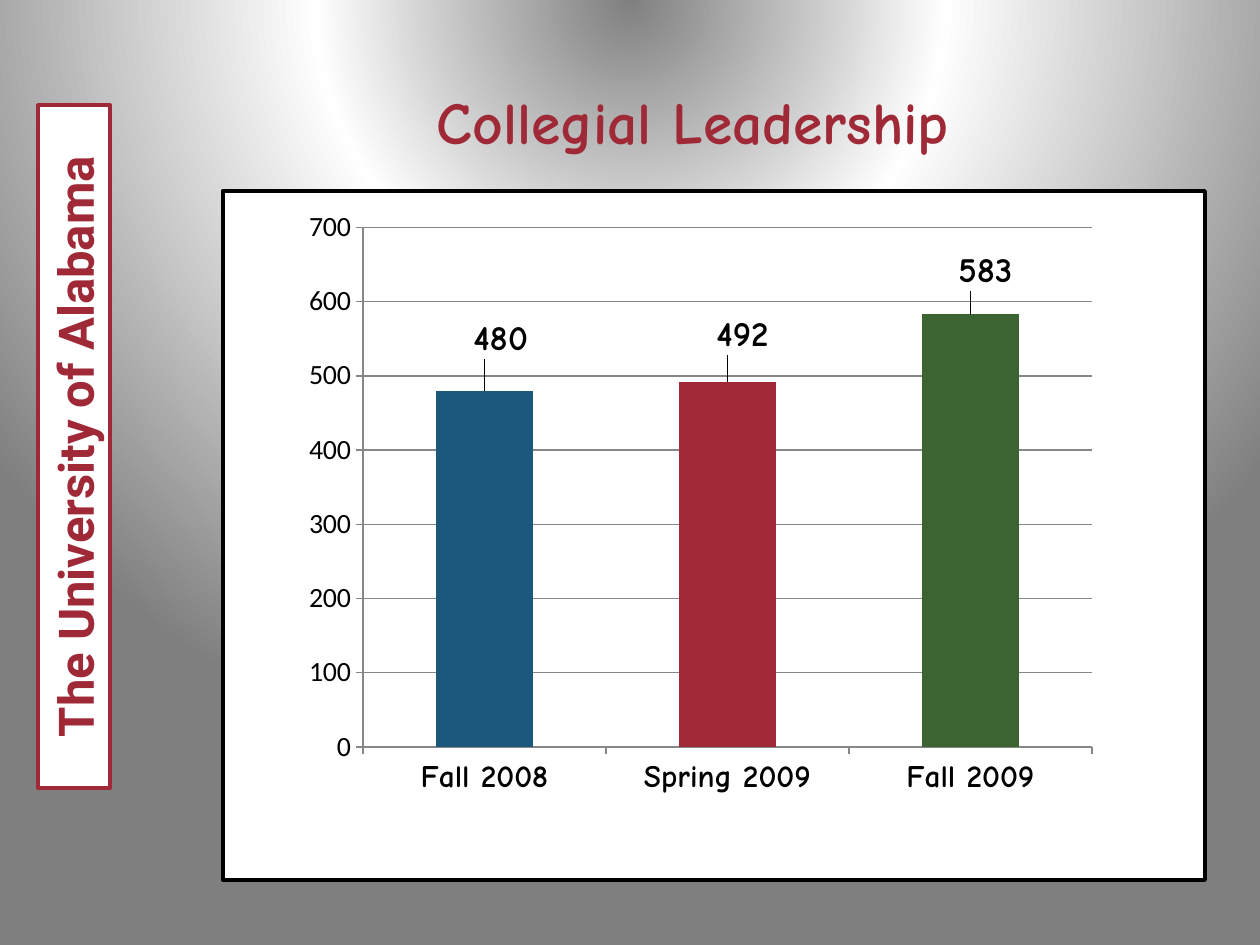
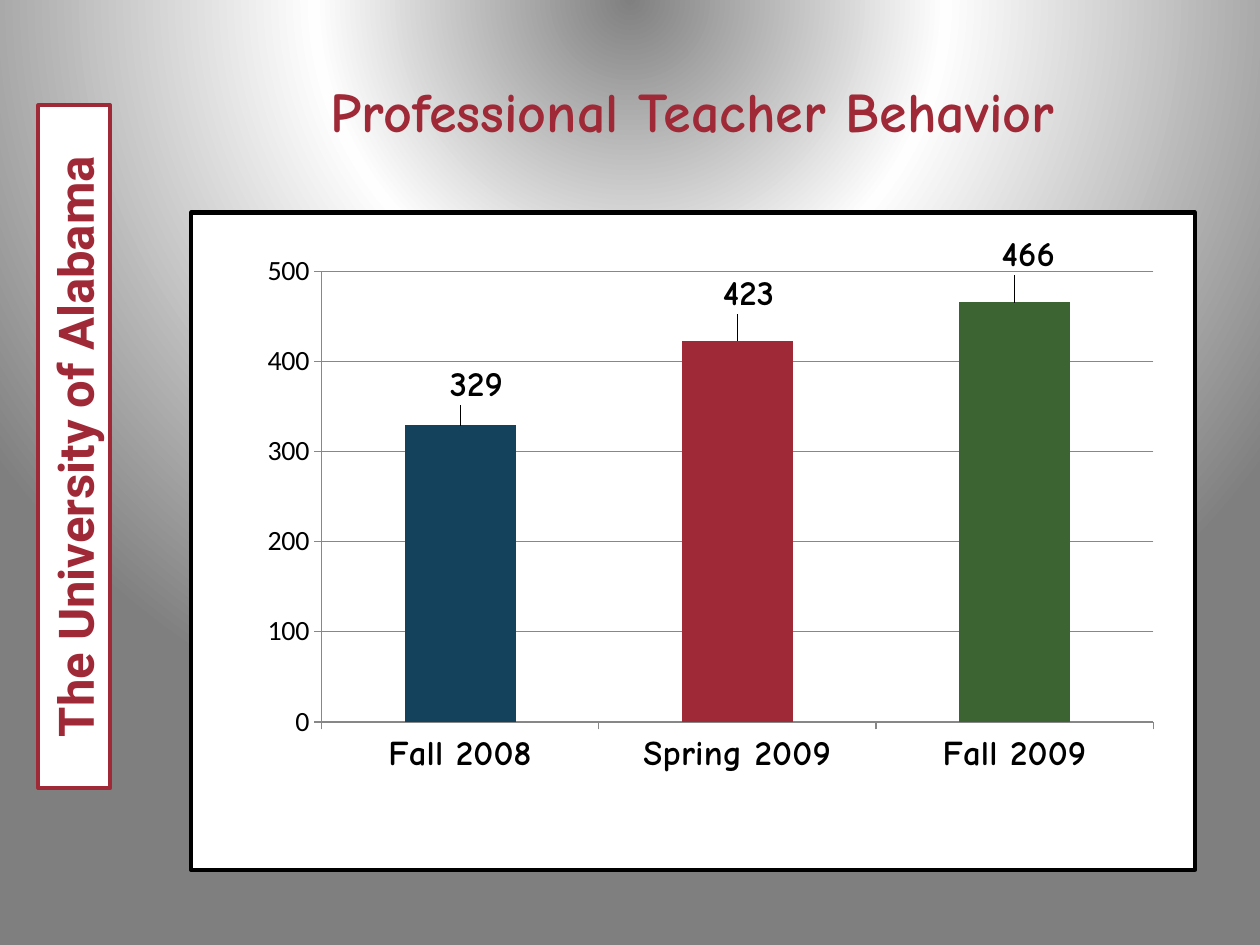
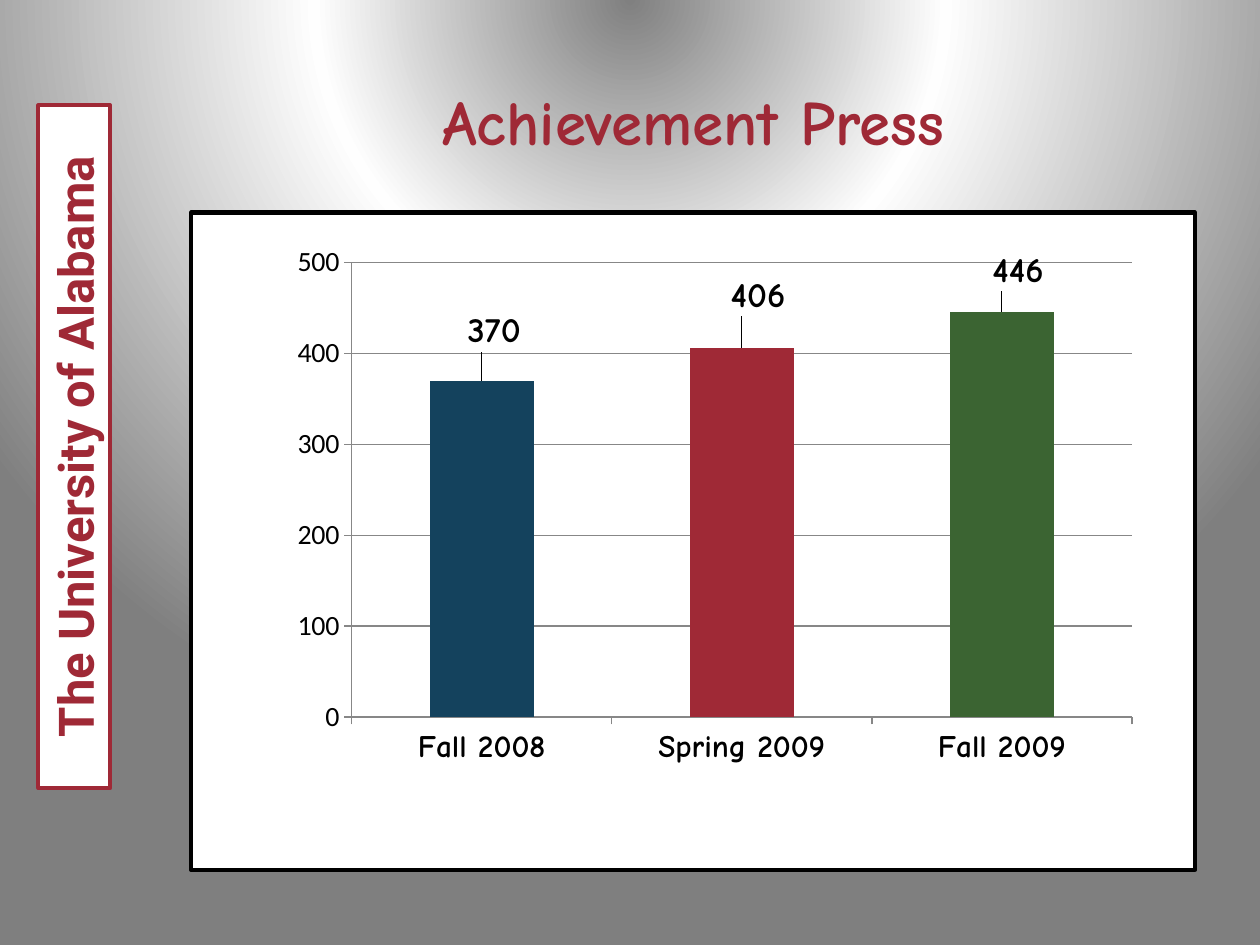
"""Build three school climate bar chart slides."""
from lxml import etree
from pptx import Presentation
from pptx.chart.data import CategoryChartData
from pptx.dml.color import RGBColor
from pptx.enum.chart import XL_CHART_TYPE, XL_LABEL_POSITION, XL_TICK_LABEL_POSITION, XL_TICK_MARK
from pptx.enum.shapes import MSO_SHAPE
from pptx.enum.text import MSO_ANCHOR, PP_ALIGN
from pptx.oxml import parse_xml
from pptx.oxml.ns import nsdecls, qn
from pptx.util import Inches, Pt

COLUMNS = XL_CHART_TYPE.COLUMN_CLUSTERED
ABOVE_BAR = XL_LABEL_POSITION.OUTSIDE_END
LABELS_LOW = XL_TICK_LABEL_POSITION.LOW
TICK_OUT = XL_TICK_MARK.OUTSIDE
RECTANGLE = MSO_SHAPE.RECTANGLE
MIDDLE = MSO_ANCHOR.MIDDLE
CENTER = PP_ALIGN.CENTER

CRIMSON, GREEN, BLUE, NAVY = "9F2936", "3B6432", "1B587C", "14425D"
WHITE, BLACK, GRID = "FFFFFF", "000000", "878787"
HAND, SANS, BANNER_FONT = "Comic Neue", "Calibri", "Roboto"
BACKDROP_STOPS = [(0, "808080"), (40, "FEFEFE"), (100, "7F7F7F")]
TERMS = ["Fall 2008", "Spring 2009", "Fall 2009"]

SURVEYS = [
    dict(title="Collegial Leadership", title_top=0.33, title_size=34,
         scores=[480, 492, 583], first_color=BLUE, top_score=700, term_size=18,
         box=(1.75, 1.5, 7.83, 5.5), plot_box=(1.12, 0.29, 5.81, 4.15),
         nudges=[(0.13, -0.21), (0.12, -0.17), (0.12, -0.14)]),
    dict(title="Professional Teacher Behavior", title_top=0.25, title_size=32,
         scores=[329, 423, 466], first_color=NAVY, top_score=500, term_size=20,
         box=(1.5, 1.67, 8, 5.25), plot_box=(1.04, 0.47, 6.63, 3.6),
         nudges=[(0.13, -0.12), (0.09, -0.17), (0.11, -0.17)]),
    dict(title="Achievement Press", title_top=0.33, title_size=36,
         scores=[370, 406, 446], first_color=NAVY, top_score=500, term_size=18,
         box=(1.5, 1.67, 8, 5.25), plot_box=(1.28, 0.4, 6.22, 3.63),
         nudges=[(0.1, -0.19), (0.13, -0.21), (0.13, -0.12)]),
]


def rgb(color):
    """Turn a hex string into a colour."""
    return RGBColor.from_string(color)


def style_font(font, size, face, color=BLACK, bold=False):
    """Set the look of a font."""
    font.size, font.name, font.bold = Pt(size), face, bold
    font.color.rgb = rgb(color)


def write_text(frame, text, align=CENTER, anchor=MIDDLE, **look):
    """Write one formatted paragraph into a text frame."""
    frame.word_wrap = True
    frame.vertical_anchor = anchor
    paragraph = frame.paragraphs[0]
    paragraph.alignment = align
    run = paragraph.add_run()
    run.text = text
    style_font(run.font, **look)


def place(shape, left, top, width, height):
    """Move and size a shape in inches."""
    shape.left, shape.top = Inches(left), Inches(top)
    shape.width, shape.height = Inches(width), Inches(height)


def paint_backdrop(master):
    """Give the master its circular grey gradient."""
    stops = "".join(f'<a:gs pos="{pos * 1000}"><a:srgbClr val="{color}"/></a:gs>'
                    for pos, color in BACKDROP_STOPS)
    gradient = parse_xml(
        f'<a:gradFill {nsdecls("a")} rotWithShape="1"><a:gsLst>{stops}</a:gsLst>'
        '<a:path path="circle"><a:fillToRect l="50000" t="-80000" r="50000" b="180000"/>'
        '</a:path></a:gradFill>')
    master.background.fill.solid()
    solid = master.element.find(".//" + qn("p:bgPr"))[0]
    solid.getparent().replace(solid, gradient)


def add_banner(slide, layout):
    """Draw the upright university banner and hand it to the layout."""
    banner = slide.shapes.add_shape(RECTANGLE, 0, 0, 0, 0)
    place(banner, -2.12, 3.26, 5.42, 0.57)
    banner.rotation = 270
    banner.shadow.inherit = False
    banner.fill.solid()
    banner.fill.fore_color.rgb = rgb(WHITE)
    banner.line.color.rgb = rgb(CRIMSON)
    banner.line.width = Pt(2.25)
    write_text(banner.text_frame, "The University of Alabama",
               size=28, face=BANNER_FONT, color=CRIMSON, bold=True)
    banner.element.find(".//" + qn("p:cNvPr")).set("id", "20")
    layout.shapes.element.insert(2, banner.element)


def add_title(slide, text, top, size):
    """Place and fill the slide title."""
    place(slide.shapes.title, 1.5, top, 8, 1.25)
    write_text(slide.shapes.title.text_frame, text,
               size=size, face=HAND, color=CRIMSON, bold=True)


def manual_layout(**settings):
    """Make a chart layout element from its settings."""
    layout = parse_xml(f'<c:layout {nsdecls("c")}><c:manualLayout/></c:layout>')
    for tag, value in settings.items():
        etree.SubElement(layout[0], qn("c:" + tag), val=str(value))
    return layout


def frame_chart(chart):
    """Give the chart a white ground and a black border."""
    ground = parse_xml(
        f'<c:spPr {nsdecls("c", "a")}><a:solidFill><a:srgbClr val="{WHITE}"/></a:solidFill>'
        f'<a:ln w="{Pt(2.5)}"><a:solidFill><a:srgbClr val="{BLACK}"/></a:solidFill></a:ln>'
        '</c:spPr>')
    chart.element.find(qn("c:txPr")).addprevious(ground)


def place_plot(chart, plot_box, width, height):
    """Fix the inner plot area, measured in inches from the chart corner."""
    left, top, plot_width, plot_height = plot_box
    area = chart.element.find(".//" + qn("c:plotArea"))
    for automatic in area.findall(qn("c:layout")):
        area.remove(automatic)
    area.insert(0, manual_layout(
        layoutTarget="inner", xMode="edge", yMode="edge", x=left / width, y=top / height,
        w=plot_width / width, h=plot_height / height))


def style_axes(chart, top_score, term_size):
    """Format the term axis and the score axis."""
    terms, scores = chart.category_axis, chart.value_axis
    style_font(terms.tick_labels.font, term_size, HAND, bold=True)
    style_font(scores.tick_labels.font, 16, SANS)
    terms.tick_label_position = LABELS_LOW
    scores.minimum_scale, scores.maximum_scale, scores.major_unit = 0, top_score, 100
    scores.has_major_gridlines = True
    for axis in (terms, scores):
        axis.major_tick_mark = TICK_OUT
    for ruled in (terms, scores, scores.major_gridlines):
        ruled.format.line.color.rgb = rgb(GRID)
        ruled.format.line.width = Pt(0.75)


def style_bars(chart, colors, nudges, width, height):
    """Colour each bar and shift its value label."""
    bars = chart.plots[0]
    bars.gap_width = 150
    bars.vary_by_categories = False
    series = bars.series[0]
    series.data_labels.show_value = True
    style_font(series.data_labels.font, 20, HAND, bold=True)
    for index, color in enumerate(colors):
        point = series.points[index]
        point.format.fill.solid()
        point.format.fill.fore_color.rgb = rgb(color)
        style_font(point.data_label.font, 20, HAND, bold=True)
        point.data_label.position = ABOVE_BAR
    for label, (right, down) in zip(chart.element.findall(".//" + qn("c:dLbl")), nudges):
        label.insert(1, manual_layout(x=right / width, y=down / height))


def add_score_chart(slide, scores, first_color, top_score, term_size, box, plot_box, nudges):
    """Add the column chart of scores by term."""
    data = CategoryChartData()
    data.categories = TERMS
    data.add_series("Series 1", scores)
    chart = slide.shapes.add_chart(COLUMNS, *map(Inches, box), data).chart
    chart.has_legend = chart.has_title = False
    style_font(chart.font, 10, SANS)
    frame_chart(chart)
    width, height = box[2:]
    place_plot(chart, plot_box, width, height)
    style_axes(chart, top_score, term_size)
    style_bars(chart, [first_color, CRIMSON, GREEN], nudges, width, height)


def add_survey_slide(deck, layout, title, title_top, title_size, **chart_options):
    """Add one titled slide with its chart."""
    slide = deck.slides.add_slide(layout)
    add_title(slide, title, title_top, title_size)
    add_score_chart(slide, **chart_options)
    return slide


def main():
    """Build and save the deck."""
    deck = Presentation()
    deck.slide_width, deck.slide_height = Inches(10), Inches(7.5)
    title_only = deck.slide_layouts[5]
    paint_backdrop(deck.slide_master)
    slides = [add_survey_slide(deck, title_only, **survey) for survey in SURVEYS]
    add_banner(slides[0], title_only)
    deck.save("out.pptx")


if __name__ == "__main__":
    main()
